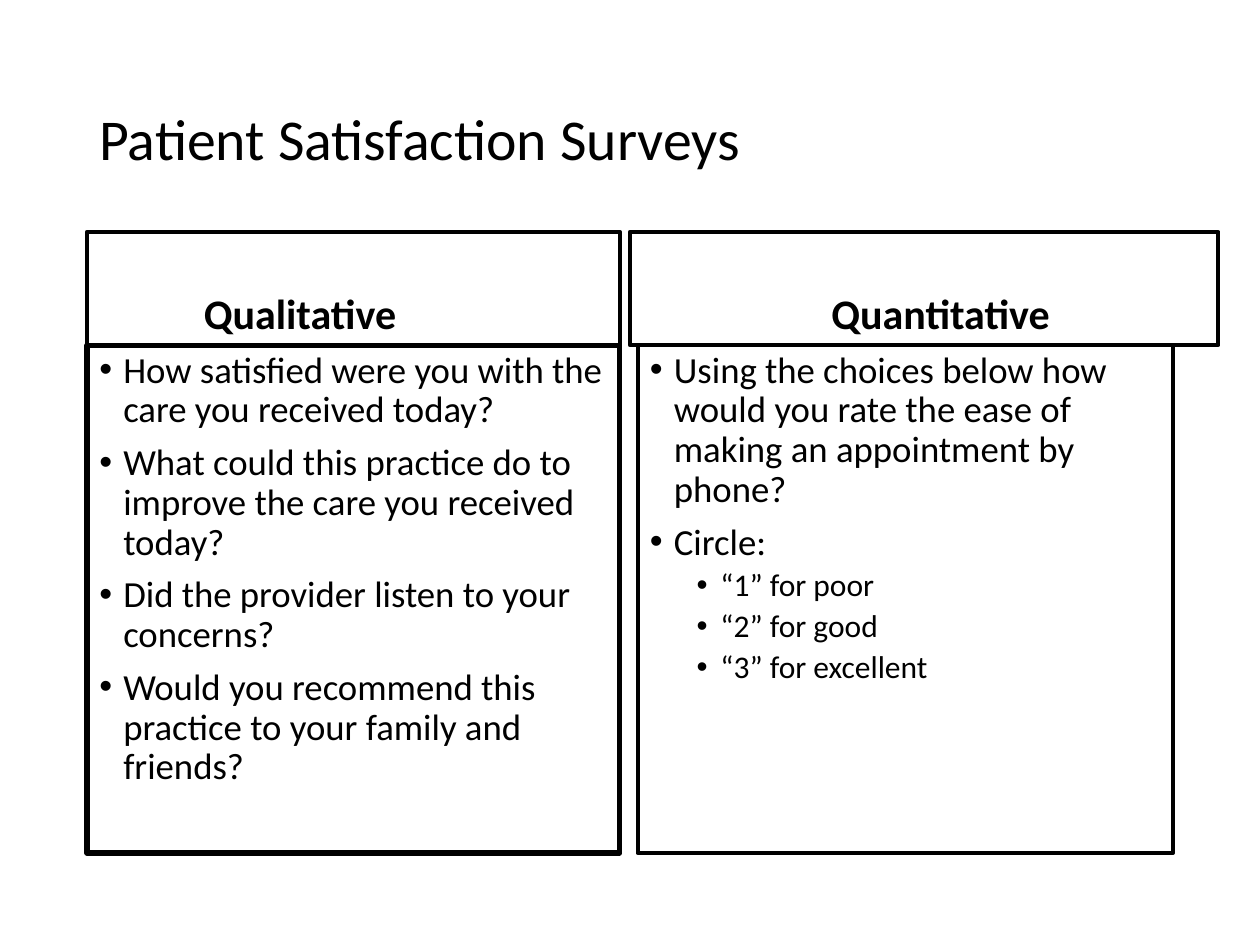
from pptx import Presentation
from pptx.dml.color import RGBColor
from pptx.enum.shapes import MSO_SHAPE
from pptx.enum.text import MSO_ANCHOR, PP_ALIGN
from pptx.oxml.ns import qn
from pptx.util import Inches, Pt
from lxml import etree

RECT = MSO_SHAPE.RECTANGLE
TOP, MIDDLE, BOTTOM = MSO_ANCHOR.TOP, MSO_ANCHOR.MIDDLE, MSO_ANCHOR.BOTTOM
LEFT = PP_ALIGN.LEFT
BLACK = "000000"


def color(code):
    return RGBColor.from_string(code)


def write(frame, anchor, lines, bullet=False):
    """Each line is (text, size, left indent, space before, bold)."""
    frame.word_wrap = True
    frame.vertical_anchor = anchor
    for i, (text, size, indent, before, bold) in enumerate(lines):
        para = frame.paragraphs[0] if i == 0 else frame.add_paragraph()
        para.alignment = LEFT
        para.line_spacing = 0.9
        para.space_before = Pt(before)
        props = para._p.get_or_add_pPr()
        props.set("marL", str(Inches(indent)))
        if bullet:
            para.level = 1 if size == 18 else 0
            props.set("indent", str(Inches(-0.19)))
            font = etree.SubElement(props, qn("a:buFont"))
            font.set("typeface", "Arial")
            etree.SubElement(props, qn("a:buChar")).set("char", "•")
        run = para.add_run()
        run.text = text
        run.font.name = "Calibri"
        run.font.size = Pt(size)
        run.font.bold = bold
        run.font.color.rgb = color(BLACK)


deck = Presentation()
deck.slide_width = Inches(10)
deck.slide_height = Inches(7.5)
slide = deck.slides.add_slide(deck.slide_layouts[6])

# Title
title = slide.shapes.add_textbox(Inches(0.69), Inches(0.4), Inches(8.62), Inches(1.45))
write(title.text_frame, MIDDLE, [("Patient Satisfaction Surveys", 33, 0, 0, False)])

# Text of the two columns
heads = [("Qualitative", 0.83), ("Quantitative", 1.5)]
asks = [
    "How satisfied were you with the care you received today?",
    "What could this practice do to improve the care you received today?",
    "Did the provider listen to your concerns?",
    "Would you recommend this practice to your family and friends?",
]
rating = [
    "Using the choices below how would you rate the ease of making an appointment by phone?",
    "Circle:",
]
scale = ["“1” for poor", "“2” for good", "“3” for excellent"]

head_rows = [[(text, 24, indent, 7.5, True)] for text, indent in heads]
left_rows = [(text, 21, 0.19, 7.5, False) for text in asks]
right_rows = [(text, 21, 0.19, 7.5, False) for text in rating]
right_rows += [(text, 18, 0.56, 3.8, False) for text in scale]

# Heading and body boxes: left, top, width, height, line, anchor, rows, bullet
boxes = [
    (0.69, 1.84, 4.23, 0.9, 2.25, BOTTOM, head_rows[0], False),
    (0.69, 2.74, 4.23, 4.03, 3, TOP, left_rows, True),
    (5, 1.84, 4.67, 0.9, 2.25, BOTTOM, head_rows[1], False),
    (5.06, 2.74, 4.25, 4.03, 2.25, TOP, right_rows, True),
]
for left, top, width, height, line, anchor, rows, bullet in boxes:
    box = slide.shapes.add_shape(RECT, Inches(left), Inches(top), Inches(width), Inches(height))
    box.shadow.inherit = False
    box.fill.background()
    box.line.color.rgb = color(BLACK)
    box.line.width = Pt(line)
    write(box.text_frame, anchor, rows, bullet)

deck.save("out.pptx")
